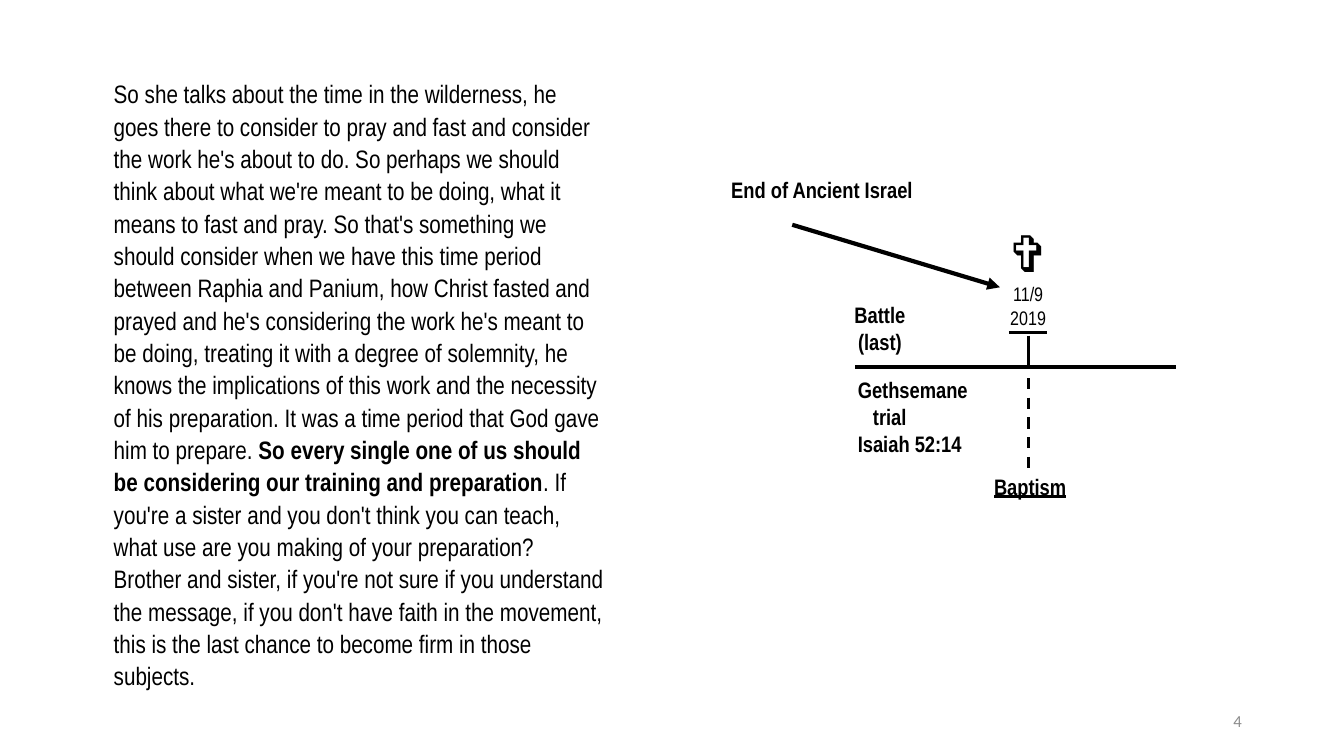
from dataclasses import dataclass, field

from lxml import etree
from pptx import Presentation
from pptx import util as u
from pptx.dml.color import RGBColor
from pptx.enum import dml, shapes, text
from pptx.oxml.ns import qn

COLS, ROWS = 40, 22.5
CELL = u.Inches(1) / 3
BLACK, GRAY = "000000", "8C8C8C"
MARK_X, AXIS_Y = 30.6, 10.92  # date mark and timeline, in grid cells
LEFT, CENTER, RIGHT = text.PP_ALIGN.LEFT, text.PP_ALIGN.CENTER, text.PP_ALIGN.RIGHT


@dataclass
class Run:
    words: str
    size: float = 16
    bold: bool = True
    underline: bool = False
    font: str = "Arial Narrow"
    color: str = BLACK


@dataclass
class Para:
    runs: list[Run]
    align: text.PP_ALIGN = CENTER
    indent: float = 0
    spacing: float = 1.0


@dataclass
class Label:
    """A text box; box is left, top, width and height in grid cells."""
    box: tuple[float, float, float, float]
    paras: list[Para]
    insets: tuple[float, float] = (0.12, 0.12)
    anchor: text.MSO_ANCHOR = text.MSO_ANCHOR.TOP
    grow: bool = False


@dataclass
class Line:
    start: tuple[float, float]
    end: tuple[float, float]
    width: float = 2
    dashed: bool = False
    arrow: bool = field(default=False)


def cells(n: float) -> u.Emu:
    return u.Emu(round(n * CELL))


def rgb(value: str) -> RGBColor:
    return RGBColor.from_string(value)


def add_label(slide, label: Label) -> None:
    sp = slide.shapes.add_textbox(*map(cells, label.box))
    tf = sp.text_frame
    tf.word_wrap = True
    tf.vertical_anchor = label.anchor
    if label.grow:
        tf.auto_size = text.MSO_AUTO_SIZE.SHAPE_TO_FIT_TEXT
    tf.margin_left = tf.margin_right = cells(label.insets[0])
    tf.margin_top = tf.margin_bottom = cells(label.insets[1])
    for i, para in enumerate(label.paras):
        p = tf.add_paragraph() if i else tf.paragraphs[0]
        p.alignment = para.align
        p.line_spacing = para.spacing
        if para.indent:
            p._p.get_or_add_pPr().set("marL", str(cells(para.indent)))
        for run in para.runs:
            r = p.add_run()
            r.text = run.words
            r.font.name, r.font.size = run.font, u.Pt(run.size)
            r.font.bold, r.font.underline = run.bold, run.underline
            r.font.color.rgb = rgb(run.color)


def add_line(slide, line: Line) -> None:
    sp = slide.shapes.add_connector(
        shapes.MSO_CONNECTOR.STRAIGHT, *map(cells, line.start + line.end))
    sp.line.color.rgb = rgb(BLACK)
    sp.line.width = u.Pt(line.width)
    if line.dashed:
        sp.line.dash_style = dml.MSO_LINE.DASH
    if line.arrow:
        etree.SubElement(sp.line._get_or_add_ln(), qn("a:tailEnd"), type="triangle")
    etree.SubElement(sp._element.spPr, qn("a:effectLst"))


BODY = [
    Run("So she talks about the time in the wilderness, he goes there to consider to pray "
        "and fast and consider the work he's about to do. So perhaps we should think about "
        "what we're meant to be doing, what it means to fast and pray. So that's something "
        "we should consider when we have this time period between Raphia and Panium, how "
        "Christ fasted and prayed and he's considering the work he's meant to be doing, "
        "treating it with a degree of solemnity, he knows the implications of this work and "
        "the necessity of his preparation. It was a time period that God gave him to "
        "prepare. ", 18, bold=False),
    Run("So every single one of us should be considering our training and preparation", 18),
    Run(". If you're a sister and you don't think you can teach, what use are you making of "
        "your preparation? Brother and sister, if you're not sure if you understand the "
        "message, if you don't have faith in the movement, this is the last chance to "
        "become firm in those subjects.", 18, bold=False),
]

LABELS = [
    Label((28.26, 20.85, 9, 1.2),
          [Para([Run("4", 12, bold=False, font="Calibri", color=GRAY)], RIGHT)],
          insets=(0.3, 0.15), anchor=text.MSO_ANCHOR.MIDDLE),
    Label((3.09, 2.13, 15.27, 18.72), [Para(BODY, LEFT, spacing=1.07)],
          insets=(0.3, 0.15), grow=True),
    Label((29.19, 6.48, 2.82, 3.12),
          [Para([Run(words, size, bold=False)])
           for words, size in (("✞", 36), ("11/9", 14), ("2019", 14))]),
    Label((25.41, 11.07, 4.35, 2.94),
          [Para([Run("Gethsemane")], LEFT),
           Para([Run("trial")], LEFT, indent=0.45),
           Para([Run("Isaiah 52:14")], LEFT)]),
    Label((24.84, 8.85, 2.7, 2.07), [Para([Run("Battle")]), Para([Run("(last)")])]),
    Label((21.09, 5.13, 6.75, 2.07), [Para([Run("End of Ancient Israel")])]),
    Label((29.31, 13.95, 2.7, 1.44), [Para([Run("Baptism", underline=True)])]),
]

LINES = [
    Line((35, AXIS_Y), (25.44, AXIS_Y), width=3),
    Line((MARK_X, 9.99), (MARK_X, AXIS_Y)),
    Line((MARK_X - 0.57, 9.9), (MARK_X + 0.57, 9.9)),
    Line((23.58, 6.69), (29.76, 8.55), width=3, arrow=True),
    Line((MARK_X, 11.25), (MARK_X, 13.95), dashed=True),
]


def main() -> None:
    prs = Presentation()
    prs.slide_width, prs.slide_height = cells(COLS), cells(ROWS)
    slide = prs.slides.add_slide(prs.slide_layouts[6])
    for label in LABELS:
        add_label(slide, label)
    for line in LINES:
        add_line(slide, line)
    prs.save("out.pptx")


if __name__ == "__main__":
    main()
